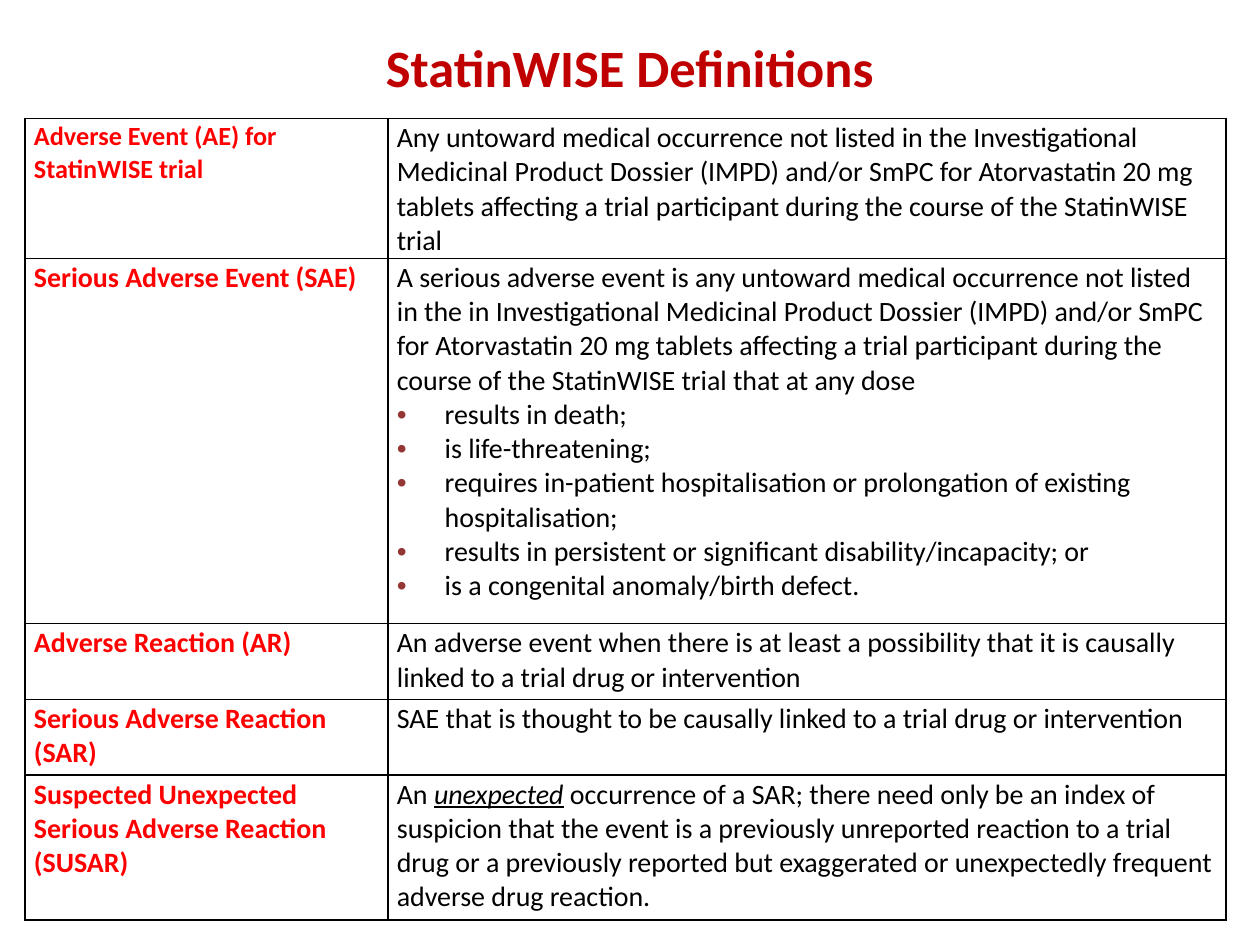
import pptx
import pptx.util
import pptx.dml.color
import pptx.enum.text
from dataclasses import dataclass
from lxml import etree
from pptx.oxml.ns import qn
from pptx.util import Inches, Pt


@dataclass(frozen=True)
class Theme:
    font: str = "Calibri"
    title: str = "C00000"
    term: str = "FF0000"
    text: str = "000000"
    bullet: str = "943634"
    head: int = 30
    small: int = 15
    body: int = 16


theme = Theme()


def style(para, size, color, bold=False):
    for run in para.runs:
        font = run.font
        font.name = theme.font
        font.size = Pt(size)
        font.bold = bold
        font.color.rgb = pptx.dml.color.RGBColor.from_string(color)


def frame(cell):
    """Give a cell thin margins, no fill and a black line on each side."""
    cell.margin_left = cell.margin_right = Inches(0.07)
    cell.margin_top = cell.margin_bottom = Inches(0.02)
    cell.fill.background()
    props = cell._tc.get_or_add_tcPr()
    for spot, side in enumerate(("lnL", "lnR", "lnT", "lnB")):
        line = etree.Element(qn(f"a:{side}"), w=str(Pt(1)))
        fill = etree.SubElement(line, qn("a:solidFill"))
        etree.SubElement(fill, qn("a:srgbClr"), val=theme.text)
        props.insert(spot, line)


# Each row: term, term size, height, paragraphs. "• " starts a bullet,
# and underscores enclose stressed words.
event = [
    ("Adverse Event (AE) for StatinWISE trial", theme.small, 1.11, [
        "Any untoward medical occurrence not listed in the Investigational "
        "Medicinal Product Dossier (IMPD) and/or SmPC for Atorvastatin 20 mg "
        "tablets affecting a trial participant during the course of the "
        "StatinWISE trial"]),
]
others = [
    ("Serious Adverse Event (SAE)", theme.body, 2.9, [
        "A serious adverse event is any untoward medical occurrence not "
        "listed in the in Investigational Medicinal Product Dossier (IMPD) "
        "and/or SmPC for Atorvastatin 20 mg tablets affecting a trial "
        "participant during the course of the StatinWISE trial that at any "
        "dose",
        "• results in death;",
        "• is life-threatening;",
        "• requires in-patient hospitalisation or prolongation of existing "
        "hospitalisation;",
        "• results in persistent or significant disability/incapacity; or",
        "• is a congenital anomaly/birth defect."]),
    ("Adverse Reaction (AR)", theme.body, 0.6, [
        "An adverse event when there is at least a possibility that it is "
        "causally linked to a trial drug or intervention"]),
    ("Serious Adverse Reaction (SAR)", theme.body, 0.6, [
        "SAE that is thought to be causally linked to a trial drug or "
        "intervention"]),
    ("Suspected Unexpected Serious Adverse Reaction (SUSAR)", theme.body,
     1.15, [
        "An _unexpected_ occurrence of a SAR; there need only be an index of "
        "suspicion that the event is a previously unreported reaction to a "
        "trial drug or a previously reported but exaggerated or unexpectedly "
        "frequent adverse drug reaction."]),
]

deck = pptx.Presentation()
deck.slide_width = Inches(10)
deck.slide_height = Inches(7.5)
slide = deck.slides.add_slide(deck.slide_layouts[6])

title = slide.shapes.add_textbox(0, Inches(0.23), Inches(10), Inches(0.61))
title.text_frame.word_wrap = True
title.text_frame.text = "StatinWISE Definitions"
para = title.text_frame.paragraphs[0]
para.alignment = pptx.enum.text.PP_ALIGN.CENTER
style(para, theme.head, theme.title, True)

widths = (2.88, 6.65)
top = 0.94
for rows in (event, others):
    height = sum(row[2] for row in rows)
    table = slide.shapes.add_table(
        len(rows), len(widths), Inches(0.2), Inches(top),
        Inches(sum(widths)), Inches(height)).table
    table.first_row = table.horz_banding = False
    top += height
    for col, width in zip(table.columns, widths):
        col.width = Inches(width)

    for index, (term, size, tall, lines) in enumerate(rows):
        table.rows[index].height = Inches(tall)
        left, right = table.cell(index, 0), table.cell(index, 1)
        frame(left)
        frame(right)
        left.text_frame.text = term
        style(left.text_frame.paragraphs[0], size, theme.term, True)

        right.text_frame.text = "\n".join(
            line.removeprefix("• ") for line in lines)
        for para, line in zip(right.text_frame.paragraphs, lines):
            if "_" in line:
                parts = line.split("_")
                para.text = parts[0]
                for part in parts[1:]:
                    para.add_run().text = part
                para.runs[1].font.italic = True
                para.runs[1].font.underline = True
            style(para, theme.body, theme.text)
            if line.startswith("• "):
                props = para._p.get_or_add_pPr()
                props.set("marL", str(Inches(0.38)))
                props.set("indent", str(Inches(-0.38)))
                tint = etree.SubElement(props, qn("a:buClr"))
                etree.SubElement(tint, qn("a:srgbClr"), val=theme.bullet)
                etree.SubElement(props, qn("a:buFont"), typeface="Arial")
                etree.SubElement(props, qn("a:buChar"), char="•")

deck.save("out.pptx")
